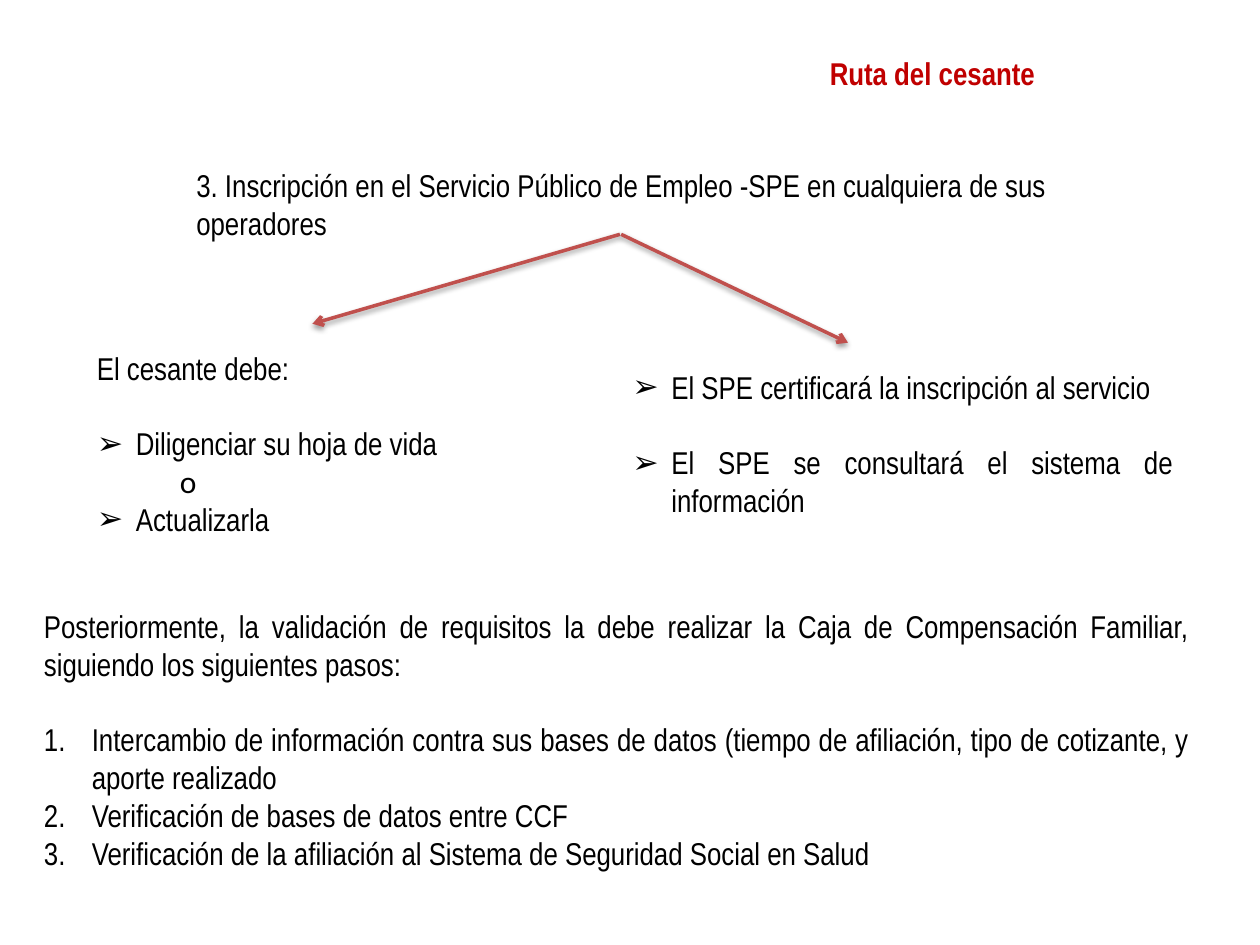
from dataclasses import dataclass

from lxml import etree
from pptx import Presentation
from pptx.dml.color import RGBColor
from pptx.enum.shapes import MSO_CONNECTOR
from pptx.enum.text import MSO_ANCHOR, MSO_AUTO_SIZE, PP_ALIGN
from pptx.oxml.ns import qn
from pptx.util import Pt

LEFT, MID, JUST = PP_ALIGN.LEFT, PP_ALIGN.CENTER, PP_ALIGN.JUSTIFY
TOP, FIXED = MSO_ANCHOR.TOP, MSO_AUTO_SIZE.NONE
LINE = MSO_CONNECTOR.STRAIGHT
PX = 9144  # 100 px to the inch


@dataclass
class Theme:
    ink: RGBColor = RGBColor(0, 0, 0)
    head: RGBColor = RGBColor(0xC0, 0, 0)
    arrow: RGBColor = RGBColor(0xC0, 0x50, 0x4D)
    font: str = "Arial Narrow"
    alt: str = "Calibri"
    size: Pt = Pt(18)
    gap: Pt = Pt(21.5)


theme = Theme()

# Paragraph kind: left margin, first-line indent, bullet tag, its attributes
KINDS = {
    "plain": (0, 0, "buNone", {}),
    "or": (66, 0, "buNone", {}),
    "arrow": (31, -31, "buChar", {"char": "➢"}),
    "step": (38, -38, "buAutoNum", {"type": "arabicPeriod"}),
}


def add(parent, tag, **attrs):
    return etree.SubElement(parent, qn(f"a:{tag}"), attrs)


def write(shape, box, align, items, color=theme.ink, bold=False):
    """Place a shape and fill it with (kind, text, gap before) paragraphs."""
    shape.left, shape.top, shape.width, shape.height = [n * PX for n in box]
    frame = shape.text_frame
    frame.word_wrap = True
    frame.auto_size = FIXED
    frame.vertical_anchor = TOP
    for i, (kind, text, gap) in enumerate(items):
        para = frame.paragraphs[0] if i == 0 else frame.add_paragraph()
        para.alignment = align
        if gap:
            para.space_before = theme.gap
        margin, indent, tag, attrs = KINDS[kind]
        props = para._p.get_or_add_pPr()
        props.set("marL", str(margin * PX))
        props.set("indent", str(indent * PX))
        if tag == "buChar":
            add(props, "buFont", typeface="Arial")
        add(props, tag, **attrs)
        run = para.add_run()
        run.text = text
        font = run.font
        font.name = theme.alt if kind == "or" else theme.font
        font.size = theme.size
        font.bold = bold
        font.color.rgb = color


deck = Presentation()
deck.slide_width, deck.slide_height = 1000 * PX, 750 * PX
slide = deck.slides.add_slide(deck.slide_layouts[5])
shapes = slide.shapes

write(shapes.title, (539, 38, 402, 40), MID,
      [("plain", "Ruta del cesante", False)], theme.head, True)

blocks = [
    ((146, 127, 764, 71), LEFT, [
        ("plain", "3. Inscripción en el Servicio Público de Empleo -SPE en "
                  "cualquiera de sus operadores", False),
    ]),
    ((67, 272, 291, 162), LEFT, [
        ("plain", "El cesante debe:", False),
        ("arrow", "Diligenciar su hoja de vida", True),
        ("or", "o", False),
        ("arrow", "Actualizarla", False),
    ]),
    ((492, 287, 449, 131), JUST, [
        ("arrow", "El SPE certificará la inscripción al servicio", False),
        ("arrow", "El SPE se consultará el sistema de información", True),
    ]),
    ((25, 477, 929, 252), JUST, [
        ("plain", "Posteriormente, la validación de requisitos la debe realizar "
                  "la Caja de Compensación Familiar, siguiendo los siguientes "
                  "pasos:", False),
        ("step", "Intercambio de información contra sus bases de datos (tiempo "
                 "de afiliación, tipo de cotizante, y aporte realizado", True),
        ("step", "Verificación de bases de datos entre CCF", False),
        ("step", "Verificación de la afiliación al Sistema de Seguridad Social "
                 "en Salud", False),
    ]),
]
for box, align, items in blocks:
    write(shapes.add_textbox(0, 0, 0, 0), box, align, items)

for ends in [(492, 186, 248, 257), (493, 186, 673, 272)]:
    arrow = shapes.add_connector(LINE, *[n * PX for n in ends])
    arrow.line.color.rgb = theme.arrow
    arrow.line.width = Pt(2)
    add(arrow.line._get_or_add_ln(), "tailEnd", type="arrow")
    effects = add(arrow._element.spPr, "effectLst")
    shadow = add(effects, "outerShdw", blurRad="40000", dist="20000",
                 dir="5400000", rotWithShape="0")
    shade = add(shadow, "srgbClr", val=str(theme.ink))
    add(shade, "alpha", val="38000")

deck.save("out.pptx")
